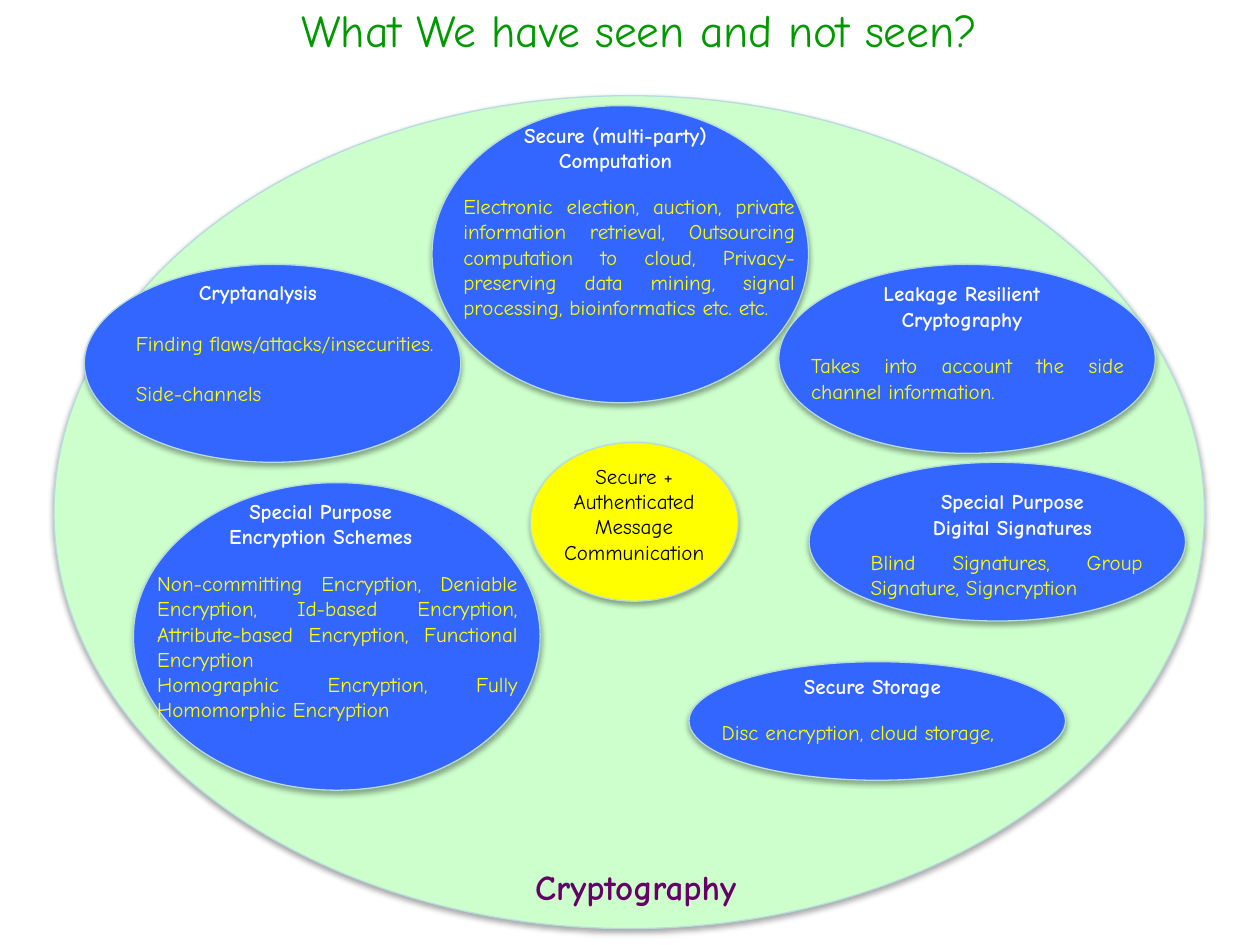
from dataclasses import dataclass

from lxml import etree
from pptx import Presentation
from pptx.dml.color import RGBColor
from pptx.enum.shapes import MSO_SHAPE
from pptx.enum.text import MSO_ANCHOR, MSO_AUTO_SIZE, PP_ALIGN
from pptx.oxml.ns import qn
from pptx.shapes.autoshape import Shape
from pptx.shapes.shapetree import GroupShapes, SlideShapes
from pptx.text.text import TextFrame
from pptx.util import Cm, Pt

ELLIPSE = MSO_SHAPE.OVAL
CENTER, JUSTIFY = PP_ALIGN.CENTER, PP_ALIGN.JUSTIFY
TOP = MSO_ANCHOR.TOP
FIXED, GROW = MSO_AUTO_SIZE.NONE, MSO_AUTO_SIZE.SHAPE_TO_FIT_TEXT

FONT = "Comic Neue"
COLORS = {
    "title": "009900",
    "field": "CCFFCC",
    "field_name": "660066",
    "core": "FFFF00",
    "core_text": "000000",
    "topic": "3366FF",
    "heading": "FFFFFF",
    "body": "FFFF00",
    "outline": "B6DCDF",
    "shadow": "000000",
}


@dataclass(frozen=True)
class Box:
    """Position and size in centimetres."""
    left: float
    top: float
    width: float
    height: float

    def lengths(self) -> tuple[Cm, Cm, Cm, Cm]:
        return Cm(self.left), Cm(self.top), Cm(self.width), Cm(self.height)


@dataclass(frozen=True)
class TextStyle:
    color: str
    size: float = 12
    bold: bool = False
    alignment: PP_ALIGN = CENTER
    paragraph_gap: float = 0


@dataclass(frozen=True)
class Topic:
    ellipse: Box
    heading: str
    heading_box: Box
    body: str
    body_box: Box
    paragraph_gap: float = 0


FIELD_BOX = Box(1.09, 1.93, 23.19, 16.79)
TOPICS = [
    Topic(
        Box(8.71, 2.13, 7.59, 5.99),
        "Secure (multi-party) Computation", Box(10.11, 2.34, 4.6, 1.27),
        "Electronic election, auction, private information retrieval, "
        "Outsourcing computation to cloud, Privacy-preserving data mining, "
        "signal processing, bioinformatics etc. etc.",
        Box(9.09, 3.78, 7.19, 3.33),
    ),
    Topic(
        Box(13.89, 13.34, 7.59, 2.39),
        "Secure Storage", Box(15.29, 13.46, 4.6, 0.53),
        "Disc encryption, cloud storage,", Box(14.3, 14.38, 7.19, 0.53),
    ),
    Topic(
        Box(15.7, 5.33, 7.59, 3.81),
        "Leakage Resilient Cryptography", Box(17.09, 5.54, 4.6, 1.27),
        "Takes into account the side channel information.",
        Box(16.1, 6.99, 6.81, 1.27),
    ),
    Topic(
        Box(2.69, 9.73, 8.2, 6.2),
        "Special Purpose Encryption Schemes", Box(3.99, 9.93, 4.95, 1.27),
        "Non-committing Encryption, Deniable Encryption, Id-based Encryption, "
        "Attribute-based Encryption, Functional Encryption\n"
        "Homographic Encryption, Fully Homomorphic Encryption",
        Box(2.92, 11.38, 7.77, 3.33),
    ),
    Topic(
        Box(1.7, 5.33, 7.59, 3.99),
        "Cryptanalysis", Box(2.9, 5.51, 4.6, 0.76),
        "Finding flaws/attacks/insecurities.\nSide-channels",
        Box(2.49, 6.53, 6.6, 2.59),
        paragraph_gap=14.4,
    ),
    Topic(
        Box(16.31, 9.32, 7.59, 3.2),
        "Special Purpose Digital Signatures", Box(18.11, 9.73, 4.6, 1.07),
        "Blind Signatures, Group Signature, Signcryption",
        Box(17.3, 10.95, 5.99, 1.27),
    ),
]


def color(name: str) -> RGBColor:
    return RGBColor.from_string(COLORS[name])


def write_text(text_frame: TextFrame, text: str, style: TextStyle) -> None:
    text_frame.text = text
    text_frame.word_wrap = True
    text_frame.vertical_anchor = TOP
    for paragraph in text_frame.paragraphs:
        paragraph.alignment = style.alignment
        paragraph.space_after = Pt(style.paragraph_gap)
        for run in paragraph.runs:
            run.font.name = FONT
            run.font.size = Pt(style.size)
            run.font.bold = style.bold
            run.font.color.rgb = color(style.color)


def add_label(shapes: SlideShapes | GroupShapes, box: Box, text: str,
              style: TextStyle) -> None:
    text_frame = shapes.add_textbox(*box.lengths()).text_frame
    write_text(text_frame, text, style)
    text_frame.auto_size = GROW


def add_soft_shadow(shape: Shape) -> None:
    """Give the shape a blurred shadow that falls straight down."""
    shape.shadow.inherit = False
    effects = shape._element.spPr.find(qn("a:effectLst"))
    shadow = etree.SubElement(
        effects, qn("a:outerShdw"), blurRad=str(Pt(3.1)), dist=str(Pt(1.8)),
        dir="5400000", rotWithShape="0")
    shadow_color = etree.SubElement(shadow, qn("a:srgbClr"), val=COLORS["shadow"])
    etree.SubElement(shadow_color, qn("a:alpha"), val="35000")


def add_ellipse(shapes: SlideShapes | GroupShapes, box: Box, fill: str) -> None:
    ellipse = shapes.add_shape(ELLIPSE, *box.lengths())
    ellipse.fill.solid()
    ellipse.fill.fore_color.rgb = color(fill)
    ellipse.line.color.rgb = color("outline")
    ellipse.line.width = Pt(0.75)
    add_soft_shadow(ellipse)


def add_topic(shapes: SlideShapes, topic: Topic) -> None:
    group = shapes.add_group_shape().shapes
    add_ellipse(group, topic.ellipse, "topic")
    add_label(group, topic.heading_box, topic.heading,
              TextStyle("heading", bold=True))
    add_label(group, topic.body_box, topic.body,
              TextStyle("body", alignment=JUSTIFY,
                        paragraph_gap=topic.paragraph_gap))


def set_title(title: Shape) -> None:
    title.left, title.top, title.width, title.height = Box(
        0.1, -0.08, 25.6, 2.21).lengths()
    write_text(title.text_frame, "What We have seen and not seen?",
               TextStyle("title", size=26))
    title.text_frame.auto_size = FIXED


def main() -> None:
    presentation = Presentation()
    presentation.slide_width, presentation.slide_height = Cm(25.4), Cm(19.05)
    slide = presentation.slides.add_slide(presentation.slide_layouts[5])
    shapes = slide.shapes

    set_title(shapes.title)
    add_ellipse(shapes, FIELD_BOX, "field")

    core = shapes.add_group_shape().shapes
    add_ellipse(core, Box(10.69, 8.92, 4.19, 3.2), "core")
    add_label(core, Box(10.69, 9.22, 4.19, 2.31),
              "Secure + Authenticated Message Communication",
              TextStyle("core_text"))

    add_label(shapes, Box(10.11, 17.32, 5.41, 1.12), "Cryptography",
              TextStyle("field_name", size=20, bold=True))
    for topic in TOPICS:
        add_topic(shapes, topic)

    presentation.save("out.pptx")


if __name__ == "__main__":
    main()
